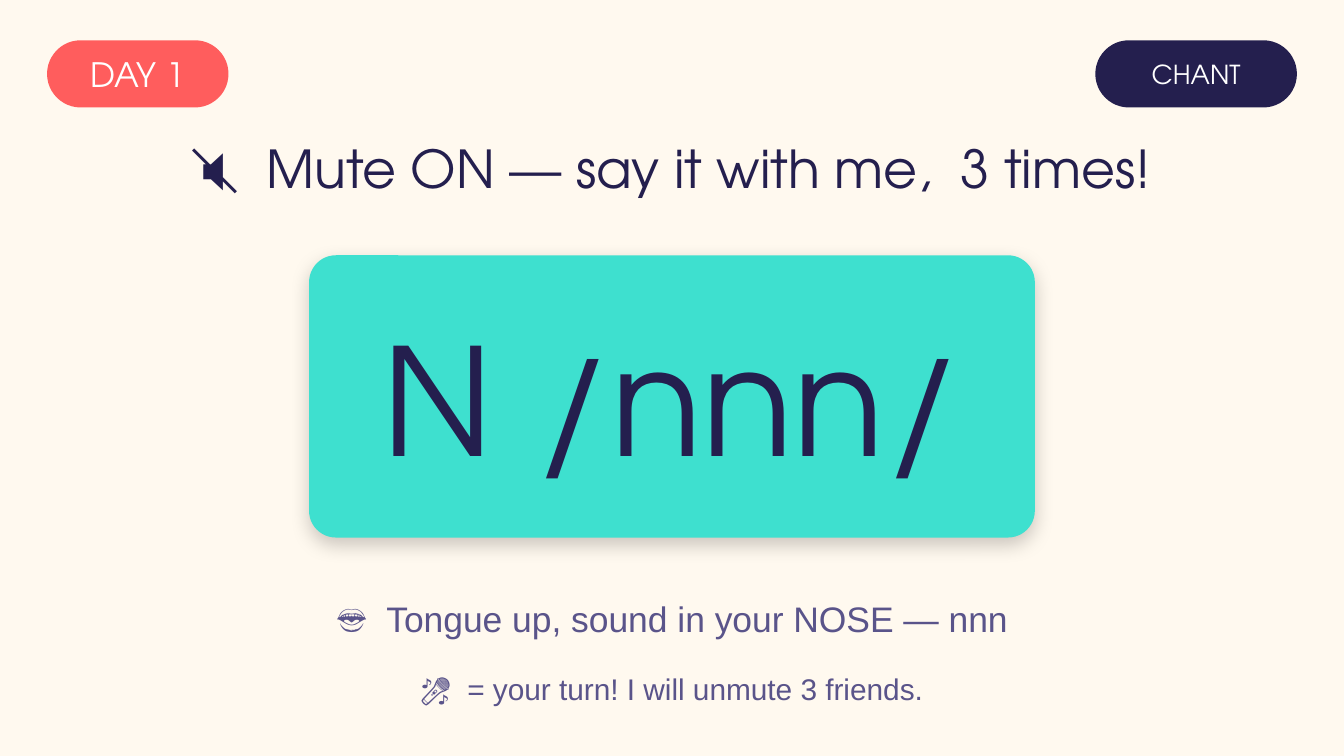
from lxml import etree
from pptx import Presentation
from pptx.dml.color import RGBColor
from pptx.enum import shapes, text
from pptx.oxml.ns import qn
from pptx.util import Pt

COLORS = {"cream": "FFF9EF", "coral": "FF5D5D", "navy": "241F4E",
          "teal": "3EE0CF", "violet": "5A548A", "white": "FFFFFF", "black": "000000"}
DISPLAY, PLAIN = "TeX Gyre Adventor", "Arial"
WIDTH, HEIGHT = 720, 405

# Content
HEADING = "🔇  Mute ON — say it with me,  3 times!"
SOUND = "N /nnn/"
# words, left, width, fill, text size
BADGES = [("DAY 1", 25.2, 97.2, "coral", 18),
          ("CHANT", 586.8, 108, "navy", 14)]
# words, top, height, text size
HINTS = [("👄  Tongue up, sound in your NOSE — nnn", 313.2, 36, 19),
         ("🎤  = your turn! I will unmute 3 friends.", 352.8, 32.4, 16)]


def rgb(name):
    return RGBColor.from_string(COLORS[name])


def write(holder, words, size, color="navy", font=DISPLAY, inset=(7.2, 3.6)):
    """Put one centred line of text into a shape, text box or placeholder."""
    frame = holder.text_frame
    frame.word_wrap = True
    frame.auto_size = text.MSO_AUTO_SIZE.NONE
    frame.vertical_anchor = text.MSO_ANCHOR.MIDDLE
    frame.margin_left = frame.margin_right = Pt(inset[0])
    frame.margin_top = frame.margin_bottom = Pt(inset[1])
    line = frame.paragraphs[0]
    line.alignment = text.PP_ALIGN.CENTER
    run = line.add_run()
    run.text = words
    run.font.name, run.font.size = font, Pt(size)
    run.font.color.rgb = rgb(color)


def add_rounded(slide, left, top, width, height, fill, rounding):
    panel = slide.shapes.add_shape(shapes.MSO_SHAPE.ROUNDED_RECTANGLE,
                                   Pt(left), Pt(top), Pt(width), Pt(height))
    panel.adjustments[0] = rounding
    panel.fill.solid()
    panel.fill.fore_color.rgb = rgb(fill)
    panel.line.fill.background()
    panel.shadow.inherit = False
    return panel


def add_soft_shadow(panel):
    effects = panel.element.spPr.find(qn("a:effectLst"))
    shadow = etree.SubElement(effects, qn("a:outerShdw"), blurRad=str(Pt(10)),
                              dist=str(Pt(4)), dir=str(90 * 60000),
                              algn="bl", rotWithShape="0")
    color = etree.SubElement(shadow, qn("a:srgbClr"), val=COLORS["black"])
    etree.SubElement(color, qn("a:alpha"), val="20000")


def main():
    deck = Presentation()
    deck.slide_width, deck.slide_height = Pt(WIDTH), Pt(HEIGHT)
    slide = deck.slides.add_slide(deck.slide_layouts[5])
    slide.background.fill.solid()
    slide.background.fill.fore_color.rgb = rgb("cream")

    # Heading
    heading = slide.shapes.title
    heading.left, heading.top = Pt(0), Pt(68.4)
    heading.width, heading.height = Pt(WIDTH), Pt(43.2)
    write(heading, HEADING, 28)

    # Corner badges
    for words, left, width, fill, size in BADGES:
        badge = add_rounded(slide, left, 21.6, width, 36, fill, 0.5)
        write(badge, words, size, color="white", inset=(0, 0))

    # Sound card
    card_width = 388.8
    card = add_rounded(slide, (WIDTH - card_width) / 2, 136.8, card_width, 151.2,
                       "teal", 0.095)
    add_soft_shadow(card)
    write(card, SOUND, 80)

    # Hints
    for words, top, height, size in HINTS:
        hint = slide.shapes.add_textbox(Pt(0), Pt(top), Pt(WIDTH), Pt(height))
        write(hint, words, size, color="violet", font=PLAIN)

    deck.save("out.pptx")


if __name__ == "__main__":
    main()
